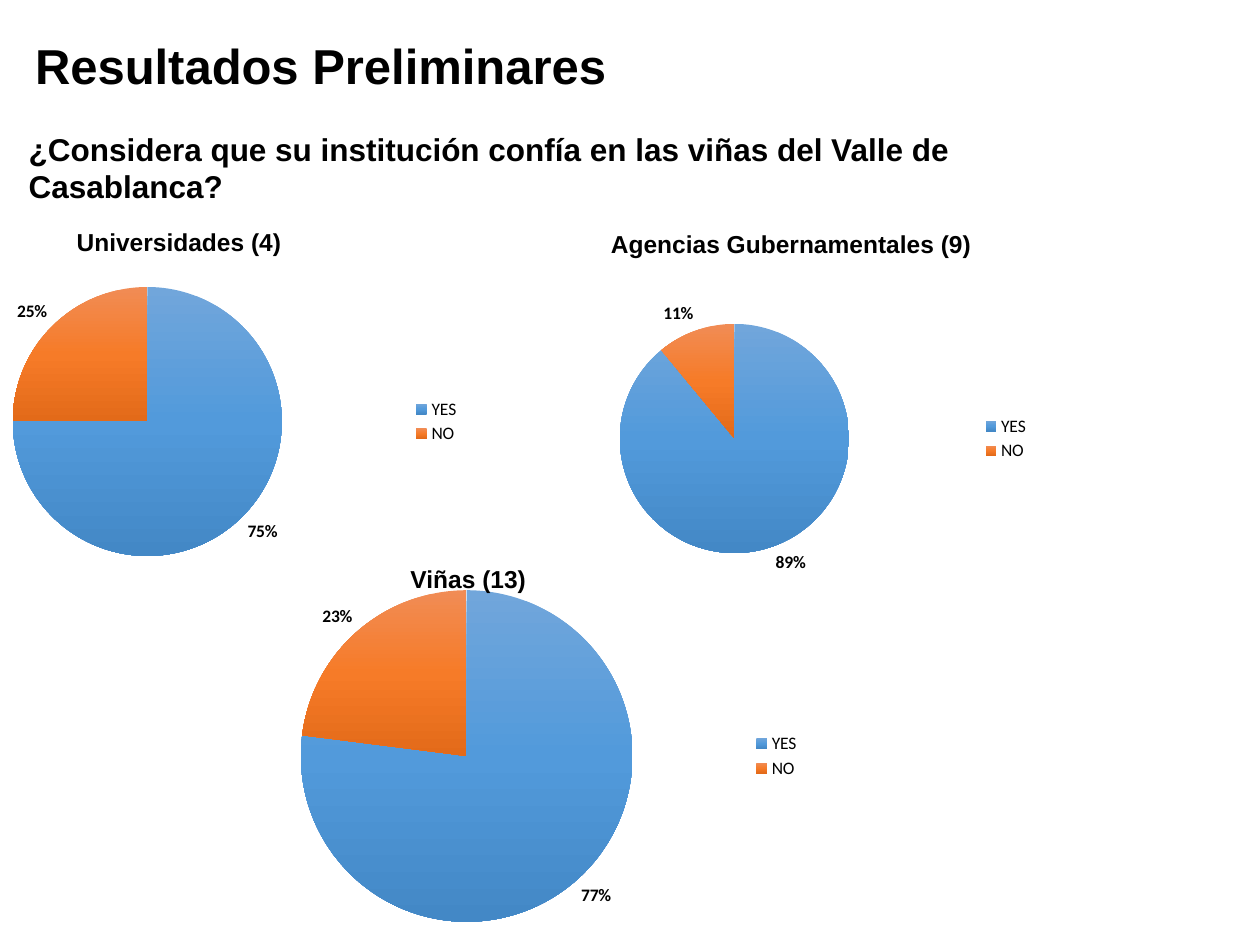
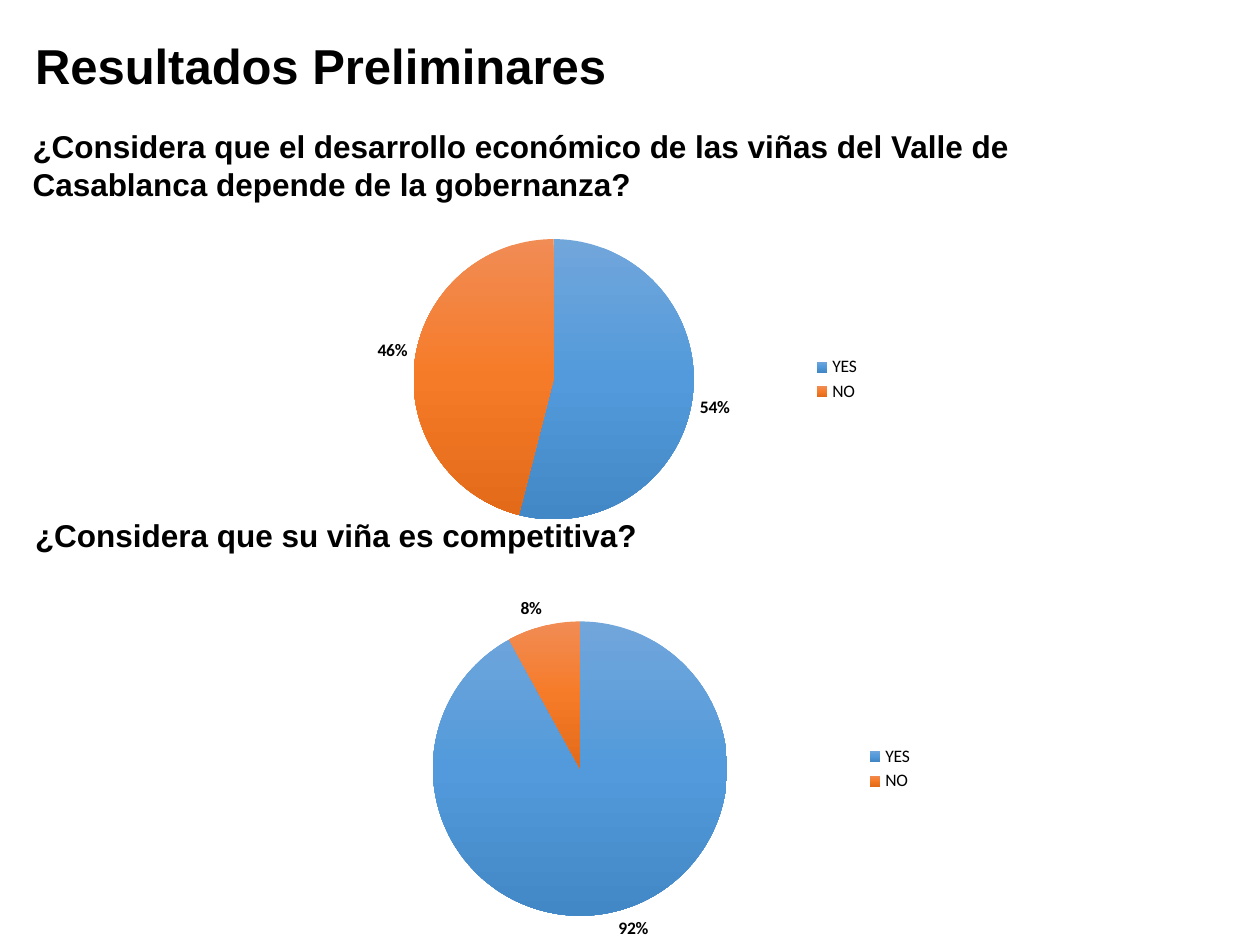
from copy import deepcopy

from pptx import Presentation
from pptx.chart.data import CategoryChartData
from pptx.dml.color import RGBColor
from pptx.enum.chart import XL_CHART_TYPE as Chart, XL_LABEL_POSITION as LabelPos
from pptx.enum.chart import XL_LEGEND_POSITION as LegendPos
from pptx.enum.text import MSO_AUTO_SIZE as AutoSize
from pptx.util import Inches, Pt


def rgb(value):
    """Turn a hex string into a colour."""
    return RGBColor.from_string(value)


def write(tf, text, size=18, bold=True, font="Arial", color="000000"):
    """Put formatted text into a text frame."""
    r = tf.paragraphs[0].add_run()
    r.text = text
    r.font.name, r.font.size, r.font.bold = font, Pt(size), bold
    r.font.color.rgb = rgb(color)


def shade(fill, colors):
    """Fill from top to bottom with evenly spaced colours."""
    fill.gradient()
    fill.gradient_angle = 270
    stops = fill.gradient_stops
    first = stops[0]._gs
    for _ in range(len(colors) - len(stops)):
        first.addnext(deepcopy(first))
    for i, (stop, color) in enumerate(zip(fill.gradient_stops, colors)):
        stop.position = i / (len(colors) - 1)
        stop.color.rgb = rgb(color)


class Deck:
    """Hold the shared style and the current slide."""

    TITLE = "Resultados Preliminares"
    ANSWERS = {"YES": ("71A6DB", "529ADB", "4388C6"),
               "NO": ("F18C55", "F67B28", "E36A19")}

    def __init__(self):
        """Start an empty presentation."""
        self.prs = Presentation()
        self.prs.slide_width, self.prs.slide_height = Inches(10), Inches(7.5)
        self.s = None

    def slide(self):
        """Add a blank slide with the shared title."""
        self.s = self.prs.slides.add_slide(self.prs.slide_layouts[6])
        self.text(self.TITLE, 0.18, 0.23, 7.86, 0.57, size=28)

    def text(self, text, x, y, w, h, wrap=True, **style):
        """Add a text box that grows with its text."""
        sp = self.s.shapes.add_textbox(*map(Inches, (x, y, w, h)))
        tf = sp.text_frame
        tf.word_wrap = wrap
        tf.auto_size = AutoSize.SHAPE_TO_FIT_TEXT
        write(tf, text, **style)

    def group_label(self, text, x, y, w):
        """Name the group of respondents above its pie."""
        self.text(text, x, y, w, 0.34, wrap=False, size=14)

    def pie(self, values, x, y, w, h):
        """Add a pie of the yes and no answers."""
        data = CategoryChartData()
        data.categories = list(self.ANSWERS)
        data.add_series("Series 1", values)
        frame = self.s.shapes.add_chart(Chart.PIE, *map(Inches, (x, y, w, h)), data)
        chart = frame.chart
        chart.has_title = False
        chart.font.name, chart.font.size = "Calibri", Pt(10)
        chart.font.color.rgb = rgb("000000")
        chart.has_legend = True
        chart.legend.position = LegendPos.RIGHT
        chart.legend.include_in_layout = False
        plot = chart.plots[0]
        plot.vary_by_categories = True
        plot.has_data_labels = True
        labels = plot.data_labels
        labels.show_percentage, labels.show_value = True, False
        labels.number_format, labels.number_format_is_linked = "0%", False
        labels.position = LabelPos.OUTSIDE_END
        labels.font.name, labels.font.size, labels.font.bold = "Calibri", Pt(10), True
        labels.font.color.rgb = rgb("000000")
        for i, colors in enumerate(self.ANSWERS.values()):
            fmt = plot.series[0].points[i].format
            shade(fmt.fill, colors)
            fmt.line.fill.background()


def trust_slide(deck):
    """Show trust in the vineyards by group of respondents."""
    deck.slide()
    deck.text("¿Considera que su institución confía en las viñas del Valle de Casablanca?",
              0.13, 0.98, 7.86, 0.71)
    deck.pie((75, 25), -0.92, 2.09, 4.67, 2.51)
    deck.pie((89, 11), 3.88, 2.25, 4.39, 2.46)
    deck.pie((77, 23), 1.45, 4.5, 5, 3)
    deck.group_label("Universidades (4)", 0.51, 1.75, 1.84)
    deck.group_label("Agencias Gubernamentales (9)", 4.75, 1.77, 3.19)
    deck.group_label("Viñas (13)", 3.16, 4.43, 1.13)


def vineyard_slide(deck):
    """Show the views on governance and competitiveness."""
    deck.slide()
    deck.text("¿Considera que el desarrollo económico de las viñas del Valle de "
              "Casablanca depende de la gobernanza?", 0.16, 0.96, 8.82, 0.71)
    deck.text("¿Considera que su viña es competitiva?", 0.18, 4.05, 7.86, 0.4)
    deck.pie((92, 8), 2.35, 4.6, 5, 3)
    deck.pie((54, 46), 2.35, 1.76, 4.58, 2.5)


def main():
    """Build and save the presentation."""
    deck = Deck()
    trust_slide(deck)
    vineyard_slide(deck)
    deck.prs.save("out.pptx")


if __name__ == "__main__":
    main()
